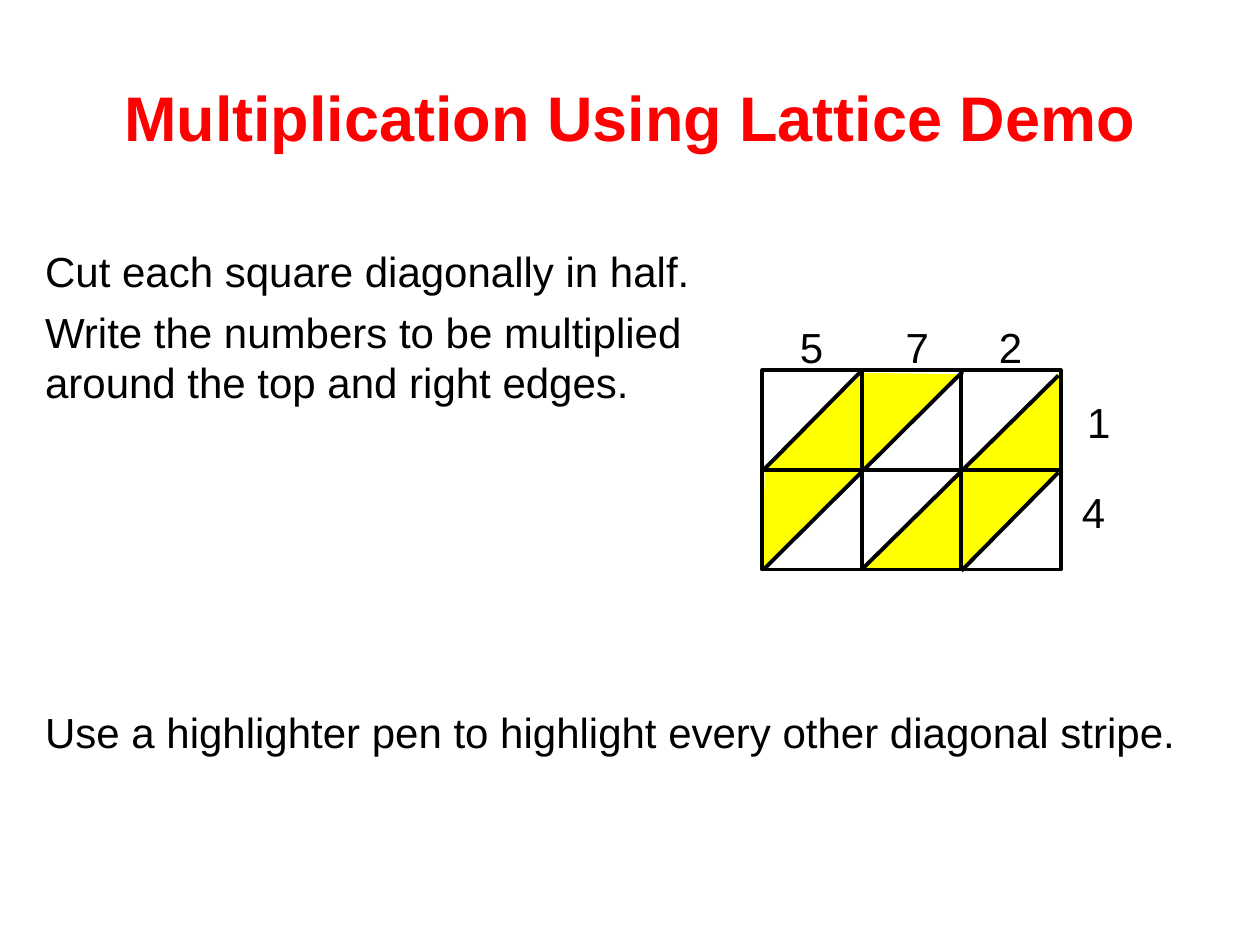
"""Build a slide that shows how to prepare a lattice for multiplication."""
from lxml import etree
from pptx import Presentation
from pptx import util as u
from pptx.dml.color import RGBColor
from pptx.enum import shapes, text
from pptx.oxml.ns import qn

BLACK = RGBColor(0, 0, 0)
RED = RGBColor(255, 0, 0)
YELLOW = RGBColor(255, 255, 0)

LEFT, TOP, CELL = 6.05, 2.94, 0.79
COLUMNS, ROWS = 3, 2
STRIPES = [
    [(6.05, 4.53), (6.07, 3.73), (6.85, 2.96), (7.63, 2.97)],
    [(7.65, 4.53), (6.85, 4.51), (8.41, 2.96), (8.42, 3.72)],
]
DIAGONALS = [
    (6.06, 3.73, 6.83, 2.95),
    (6.06, 4.52, 7.64, 2.95),
    (6.84, 4.52, 8.4, 2.98),
    (7.63, 4.53, 8.4, 3.75),
]
DIGITS = [("5", 6.44, 2.5), ("7", 7.28, 2.5), ("2", 8.02, 2.5),
          ("1", 8.72, 3.1), ("4", 8.68, 3.81)]


class LatticeSlide:
    """Hold the style and the page, and draw each kind of element."""

    font, size, title_size, stroke = "Arial", 24, 36, 2.25

    def __init__(self, deck):
        self.page = deck.slides.add_slide(deck.slide_layouts[5])

    def style(self, para, size, color, bold=False):
        para.font.name = self.font
        para.font.size = u.Pt(size)
        para.font.bold = bold
        para.font.color.rgb = color

    def outline(self, line):
        line.color.rgb = BLACK
        line.width = u.Pt(self.stroke)

    def title(self, words, left, top, width, height):
        box = self.page.shapes.title
        box.left, box.top = u.Inches(left), u.Inches(top)
        box.width, box.height = u.Inches(width), u.Inches(height)
        frame = box.text_frame
        frame.text = words
        frame.auto_size = text.MSO_AUTO_SIZE.NONE
        frame.vertical_anchor = text.MSO_ANCHOR.MIDDLE
        para = frame.paragraphs[0]
        para.alignment = text.PP_ALIGN.CENTER
        self.style(para, self.title_size, RED, bold=True)

    def words(self, lines, left, top, width, height, align=text.PP_ALIGN.LEFT):
        box = self.page.shapes.add_textbox(
            u.Inches(left), u.Inches(top), u.Inches(width), u.Inches(height))
        frame = box.text_frame
        frame.word_wrap = True
        frame.text = "\n".join(lines)
        for index, para in enumerate(frame.paragraphs):
            para.alignment = align
            if index:
                para.space_before = u.Pt(6)
            self.style(para, self.size, BLACK)

    def stripe(self, points):
        start, *rest = [(u.Inches(x), u.Inches(y)) for x, y in points]
        builder = self.page.shapes.build_freeform(*start)
        builder.add_line_segments(rest, close=True)
        shape = builder.convert_to_shape()
        shape.shadow.inherit = False
        shape.fill.solid()
        shape.fill.fore_color.rgb = YELLOW
        shape.line.fill.background()

    def square(self, left, top, side):
        shape = self.page.shapes.add_shape(
            shapes.MSO_SHAPE.RECTANGLE, u.Inches(left), u.Inches(top),
            u.Inches(side), u.Inches(side))
        shape.shadow.inherit = False
        shape.fill.background()
        self.outline(shape.line)

    def diagonal(self, *ends):
        line = self.page.shapes.add_connector(
            shapes.MSO_CONNECTOR.STRAIGHT, *map(u.Inches, ends))
        self.outline(line.line)
        etree.SubElement(line._element.spPr, qn("a:effectLst"))


def main():
    deck = Presentation()
    deck.slide_width, deck.slide_height = u.Inches(10), u.Inches(7.5)
    slide = LatticeSlide(deck)
    slide.title("Multiplication Using Lattice Demo", 0.47, 0.3, 9.06, 1.25)
    for points in STRIPES:
        slide.stripe(points)
    slide.words(["Cut each square diagonally in half.",
                 "Write the numbers to be multiplied\varound the top and right edges."],
                0.26, 1.9, 5.7, 1.4)
    slide.words(["Use a highlighter pen to highlight every other diagonal stripe."],
                0.26, 5.56, 9.47, 0.5)
    for digit, center, top in DIGITS:
        slide.words([digit], center - 0.25, top, 0.5, 0.5, text.PP_ALIGN.CENTER)
    for row in range(ROWS):
        for column in range(COLUMNS):
            slide.square(LEFT + column * CELL, TOP + row * CELL, CELL)
    for ends in DIAGONALS:
        slide.diagonal(*ends)
    deck.save("out.pptx")


if __name__ == "__main__":
    main()
